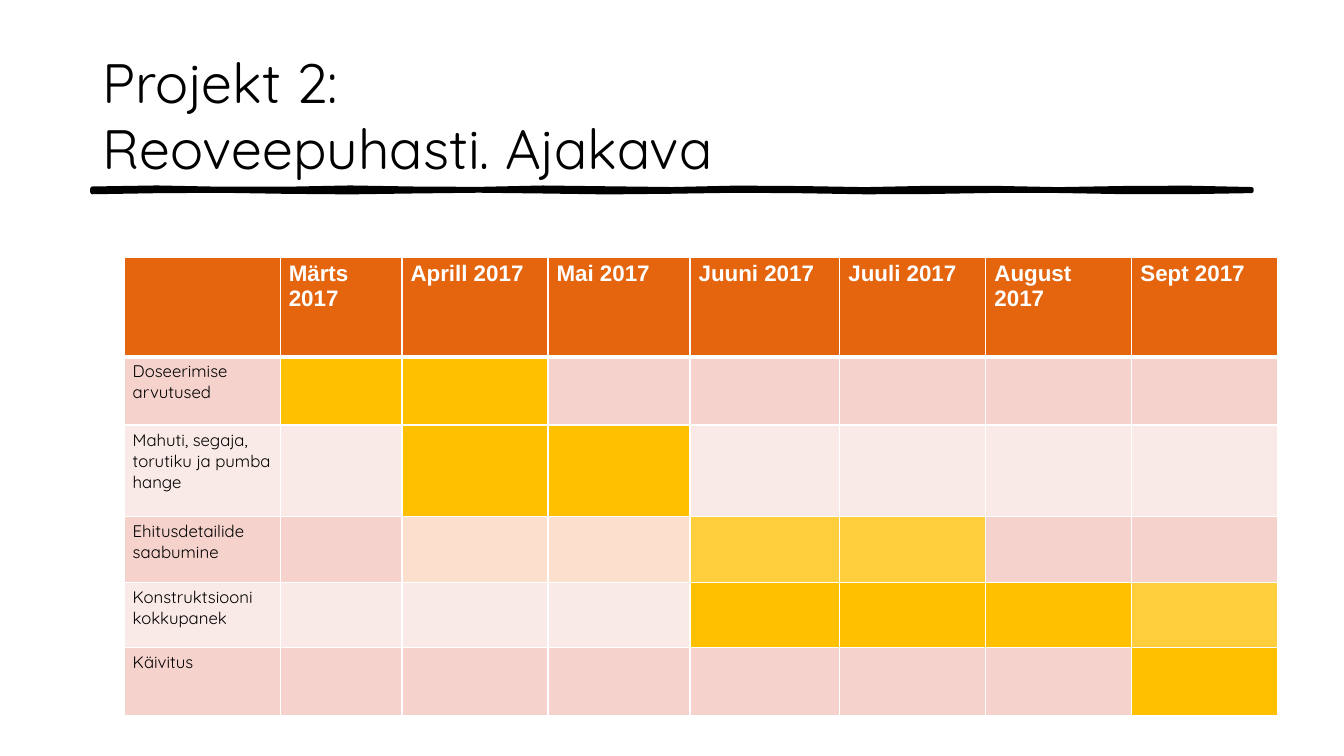
from math import sin

from lxml.etree import SubElement
from pptx import Presentation
from pptx.dml.color import RGBColor
from pptx.enum.text import MSO_ANCHOR as Anchor, PP_ALIGN as Align
from pptx.oxml.ns import qn
from pptx.util import Pt

BLACK = RGBColor(0x00, 0x00, 0x00)
WHITE = RGBColor(0xFF, 0xFF, 0xFF)
ORANGE = RGBColor(0xE4, 0x65, 0x0E)
ROSE = RGBColor(0xF5, 0xD3, 0xCC)
PALE_ROSE = RGBColor(0xFA, 0xEA, 0xE7)
PEACH = RGBColor(0xFC, 0xE0, 0xCD)
GOLD = RGBColor(0xFF, 0xC0, 0x00)
LIGHT_GOLD = RGBColor(0xFF, 0xCE, 0x3C)

HEADER_FONT = {"name": "Arial", "size": Pt(16), "bold": True}
TASK_FONT = {"name": "Quicksand", "size": Pt(12), "bold": False}
TITLE_FONT = {"name": "Quicksand", "size": Pt(39.6), "bold": False}
CELL_MARGINS = {"margin_left": Pt(6.2), "margin_right": Pt(6.2),
                "margin_top": Pt(3.1), "margin_bottom": Pt(3.1)}

MONTHS = ["", "Märts 2017", "Aprill 2017", "Mai 2017", "Juuni 2017",
          "Juuli 2017", "August 2017", "Sept 2017"]
# One letter per month: G gold, L light gold, P peach, "." the row's own colour
TASKS = [
    ("Doseerimise arvutused", "GG....."),
    ("Mahuti, segaja, torutiku ja pumba hange", ".GG...."),
    ("Ehitusdetailide saabumine", ".PPLL.."),
    ("Konstruktsiooni kokkupanek", "...GGGL"),
    ("Käivitus", "......G"),
]
MARKS = {"G": GOLD, "L": LIGHT_GOLD, "P": PEACH}
COLUMN_WIDTHS = [111.5, 87, 104.3, 101.5, 107, 104.3, 104.3, 104.3]
ROW_HEIGHTS = [71.3, 48.7, 65.2, 47, 46.8, 48.7]


def set_text(text_frame, text, font_format, color):
    text_frame.text = text
    for paragraph in text_frame.paragraphs:
        paragraph.alignment = Align.LEFT
        for run in paragraph.runs:
            for name, value in font_format.items():
                setattr(run.font, name, value)
            run.font.color.rgb = color


def style_cell(cell, fill_color, top_width, bottom_width):
    """Give the cell its margins, white borders and fill."""
    for name, value in CELL_MARGINS.items():
        setattr(cell, name, value)
    properties = cell._tc.get_or_add_tcPr()
    widths = {"a:lnL": 1, "a:lnR": 1, "a:lnT": top_width, "a:lnB": bottom_width}
    for tag, width in widths.items():
        border = SubElement(properties, qn(tag), w=str(Pt(width)))
        border_fill = SubElement(border, qn("a:solidFill"))
        SubElement(border_fill, qn("a:srgbClr"), val=str(WHITE))
    cell.fill.solid()
    cell.fill.fore_color.rgb = fill_color


presentation = Presentation()
presentation.slide_width = Pt(960)
presentation.slide_height = Pt(540)
slide = presentation.slides.add_slide(presentation.slide_layouts[5])

# Hand-drawn rule under the title
xs = range(66, 895, 46)
top = [(x, 134.6 + 0.6 * sin(x / 23)) for x in xs]
bottom = [(x, 136.8 + 0.6 * sin(x / 31)) for x in reversed(xs)]
outline = [(Pt(x), Pt(y)) for x, y in top + bottom]
builder = slide.shapes.build_freeform(*outline[0])
builder.add_line_segments(outline[1:], close=True)
rule = builder.convert_to_shape()
rule.shadow.inherit = False
rule.fill.solid()
rule.fill.fore_color.rgb = BLACK
rule.line.color.rgb = BLACK
rule.line.width = Pt(3)

title = slide.shapes.title
title.left, title.top, title.width, title.height = Pt(66), Pt(29.5), Pt(828), Pt(104.4)
title.text_frame.vertical_anchor = Anchor.MIDDLE
title.text_frame.word_wrap = True
set_text(title.text_frame, "Projekt 2:\vReoveepuhasti. Ajakava", TITLE_FONT, BLACK)
title.text_frame.paragraphs[0].line_spacing = 1.0

table = slide.shapes.add_table(
    len(ROW_HEIGHTS), len(COLUMN_WIDTHS), Pt(88.6), Pt(183.6),
    Pt(sum(COLUMN_WIDTHS)), Pt(sum(ROW_HEIGHTS))).table
for column, width in zip(table.columns, COLUMN_WIDTHS):
    column.width = Pt(width)
for row, height in zip(table.rows, ROW_HEIGHTS):
    row.height = Pt(height)

for column_index, month in enumerate(MONTHS):
    cell = table.cell(0, column_index)
    style_cell(cell, ORANGE, 1, 3)
    set_text(cell.text_frame, month, HEADER_FONT, WHITE)

for row_index, (task, schedule) in enumerate(TASKS, start=1):
    row_color = ROSE if row_index % 2 else PALE_ROSE
    for column_index, mark in enumerate("." + schedule):
        style_cell(table.cell(row_index, column_index),
                   MARKS.get(mark, row_color), 3 if row_index == 1 else 1, 1)
    set_text(table.cell(row_index, 0).text_frame, task, TASK_FONT, BLACK)

presentation.save("out.pptx")
